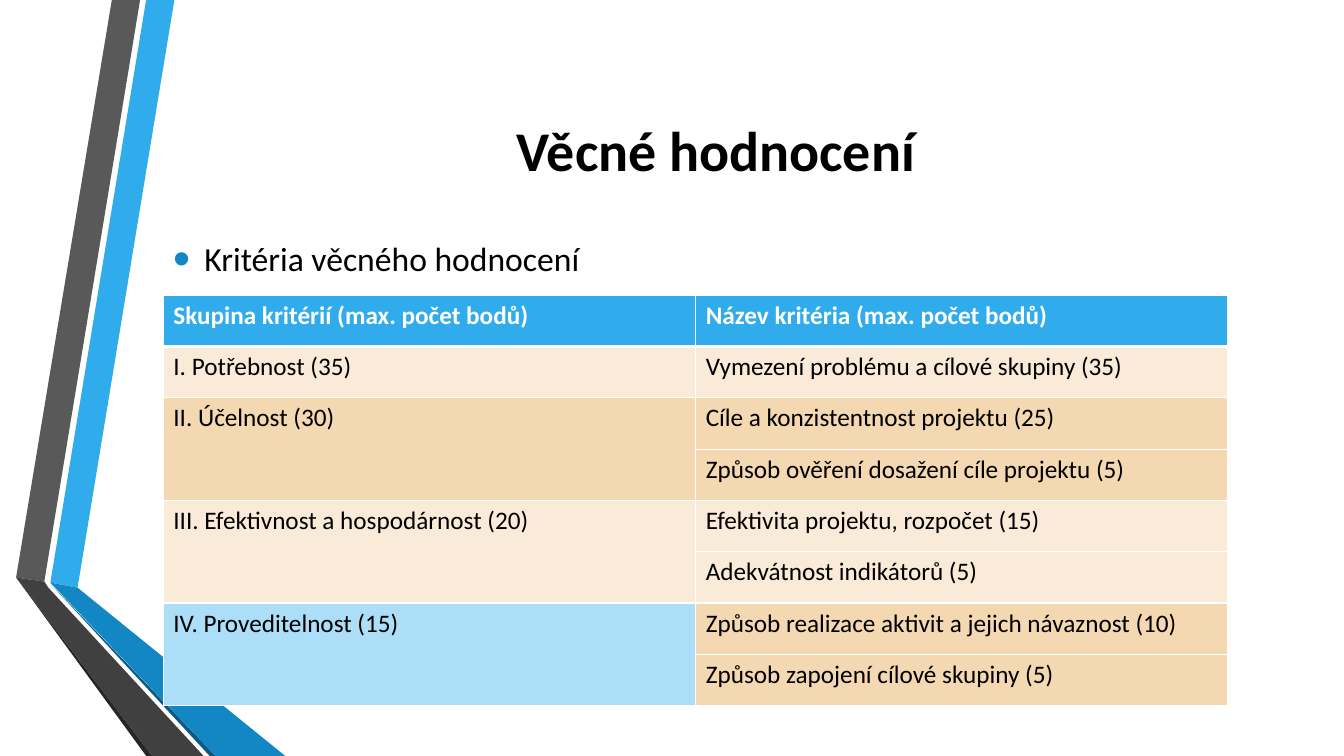
from lxml.etree import SubElement
from pptx import Presentation
from pptx.dml.color import RGBColor
from pptx.enum.text import MSO_ANCHOR, PP_ALIGN
from pptx.oxml.ns import qn
from pptx.util import Inches, Pt

FONT = "Calibri"
BLACK, WHITE, SKY, BLUE = "000000", "FFFFFF", "30ACEC", "1287C3"
PALE, SAND, ICE = "F9EBD8", "F3D8B2", "ACDEF7"

BANDS = [
    (SKY, [(0.5, 5.78), (0.77, 5.83), (1.73, 0), (1.45, 0)]),
    ("595959", [(1.39, 0), (1.11, 0), (0.16, 5.73), (0.44, 5.77)]),
    ("262626", [(0.16, 5.73), (1.45, 7.5), (1.51, 7.5)]),
    ("0C5A82", [(0.5, 5.79), (2.08, 7.5), (2.14, 7.5)]),
    (BLUE, [(0.5, 5.78), (2.14, 7.5), (2.83, 7.5), (0.77, 5.83)]),
    ("404040", [(2.02, 7.5), (0.48, 5.83), (0.44, 5.77), (0.16, 5.73), (1.51, 7.5)]),
]

HEADS = ["Skupina kritérií (max. počet bodů)", "Název kritéria (max. počet bodů)"]
GROUPS = [
    ("I. Potřebnost (35)", PALE, PALE, ["Vymezení problému a cílové skupiny (35)"]),
    ("II. Účelnost (30)", SAND, SAND,
     ["Cíle a konzistentnost projektu (25)", "Způsob ověření dosažení cíle projektu (5)"]),
    ("III. Efektivnost a hospodárnost (20)", PALE, PALE,
     ["Efektivita projektu, rozpočet (15)", "Adekvátnost indikátorů (5)"]),
    ("IV. Proveditelnost (15)", ICE, SAND,
     ["Způsob realizace aktivit a jejich návaznost (10)", "Způsob zapojení cílové skupiny (5)"]),
]


def paint(fill, color):
    """Give a fill one solid colour."""
    fill.solid()
    fill.fore_color.rgb = RGBColor.from_string(color)


def add_run(para, text, size, color=BLACK, bold=False):
    """Add one styled run to a paragraph."""
    run = para.add_run()
    run.text = text
    font = run.font
    font.name, font.size, font.bold = FONT, Pt(size), bold
    font.color.rgb = RGBColor.from_string(color)


def add_band(slide, color, points):
    """Draw one closed band of the side ribbon."""
    spots = [(Inches(x), Inches(y)) for x, y in points]
    pen = slide.shapes.build_freeform(*spots[0])
    pen.add_line_segments(spots[1:], close=True)
    band = pen.convert_to_shape()
    band.shadow.inherit = False
    paint(band.fill, color)
    band.line.fill.background()


def add_box(slide, top, height):
    """Add a middle-anchored text box and return its paragraph."""
    box = slide.shapes.add_textbox(Inches(1.62), Inches(top), Inches(10.96), Inches(height))
    frame = box.text_frame
    frame.word_wrap = True
    frame.vertical_anchor = MSO_ANCHOR.MIDDLE
    return frame.paragraphs[0]


def add_dot(para):
    """Give a paragraph a blue hanging bullet."""
    para.space_before, para.space_after = Pt(4.8), Pt(6)
    props = para._p.get_or_add_pPr()
    props.set("marL", str(Inches(0.31)))
    props.set("indent", str(Inches(-0.31)))
    tint = SubElement(props, qn("a:buClr"))
    SubElement(tint, qn("a:srgbClr"), val=BLUE)
    SubElement(props, qn("a:buSzPct"), val="145000")
    SubElement(props, qn("a:buFont"), typeface="Arial")
    SubElement(props, qn("a:buChar"), char="•")


def add_edges(cell, top, bottom):
    """Draw the white borders of a cell."""
    props = cell._tc.get_or_add_tcPr()
    for side, width in zip("LRTB", (1, 1, top, bottom)):
        line = SubElement(props, qn("a:ln" + side), w=str(Pt(width)))
        fill = SubElement(line, qn("a:solidFill"))
        SubElement(fill, qn("a:srgbClr"), val=WHITE)


def fill_cell(cell, text, back, color=BLACK, bold=False, top=1, bottom=1):
    """Set the borders, fill and text of a cell."""
    add_edges(cell, top, bottom)
    paint(cell.fill, back)
    if text:
        add_run(cell.text_frame.paragraphs[0], text, 18, color, bold)


def add_grid(slide):
    """Build the table of criteria, one merged cell per group."""
    count = 1 + sum(len(names) for *_, names in GROUPS)
    frame = slide.shapes.add_table(
        count, 2, Inches(1.62), Inches(2.93), Inches(10.56), Inches(4.07))
    table = frame.table
    table.first_row = table.horz_banding = False
    for col, head in enumerate(HEADS):
        fill_cell(table.cell(0, col), head, SKY, WHITE, True, bottom=3)
    row = 1
    for group, left, right, names in GROUPS:
        first = row
        for name in names:
            top = 3 if row == 1 else 1
            fill_cell(table.cell(row, 0), group if row == first else "", left, top=top)
            fill_cell(table.cell(row, 1), name, right, top=top)
            row += 1
        if len(names) > 1:
            table.cell(first, 0).merge(table.cell(row - 1, 0))


def main():
    """Build and save the slide."""
    deck = Presentation()
    deck.slide_width, deck.slide_height = Inches(13.33), Inches(7.5)
    slide = deck.slides.add_slide(deck.slide_layouts[6])
    paint(slide.background.fill, WHITE)
    for color, points in BANDS:
        add_band(slide, color, points)
    title = add_box(slide, 0.75, 1.45)
    title.alignment = PP_ALIGN.CENTER
    add_run(title, "Věcné hodnocení", 40, bold=True)
    body = add_box(slide, 2.2, 0.73)
    add_dot(body)
    add_run(body, "Kritéria věcného hodnocení", 24)
    add_grid(slide)
    deck.save("out.pptx")


if __name__ == "__main__":
    main()
